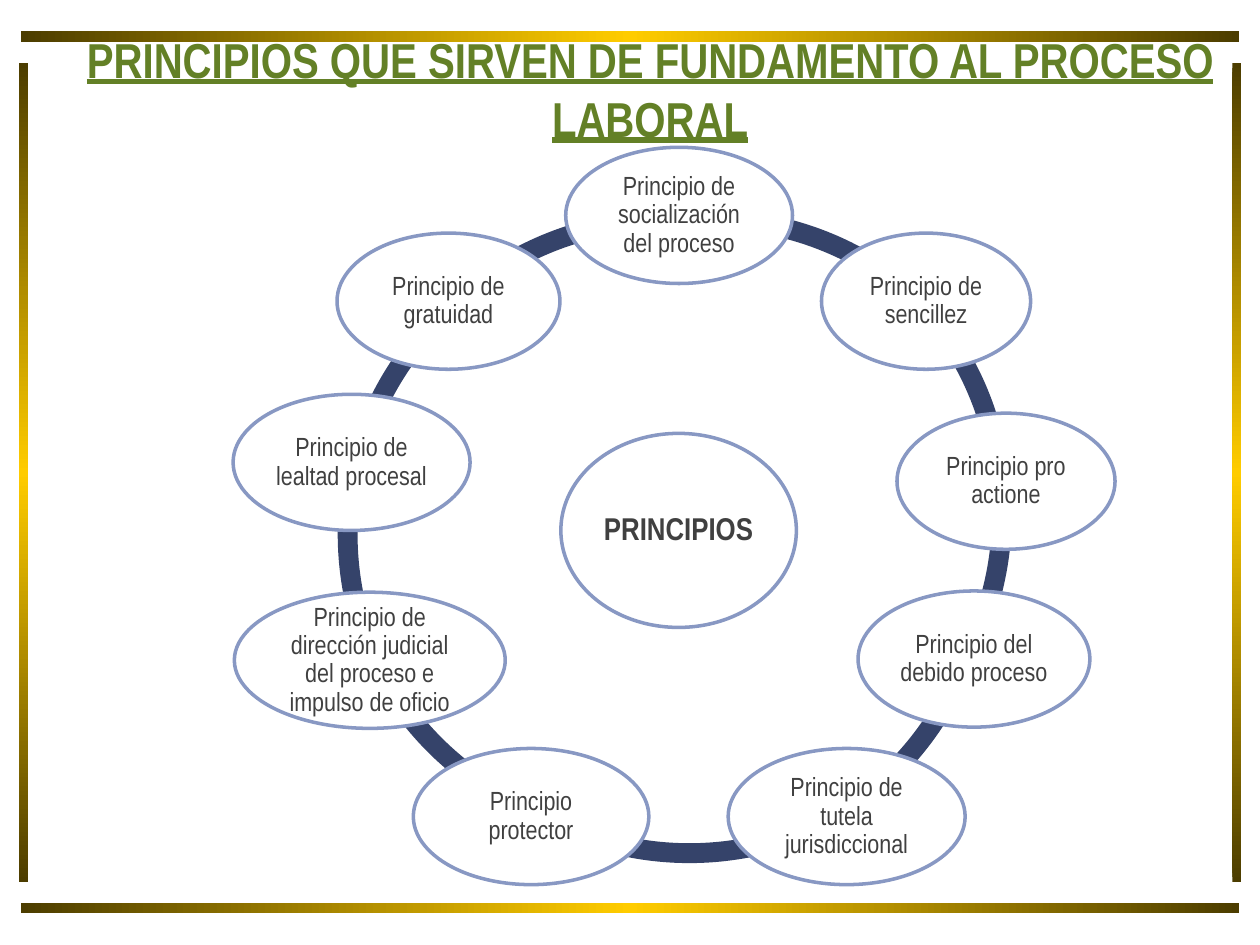
from copy import deepcopy

from pptx import Presentation
from pptx.dml.color import RGBColor
from pptx.enum.shapes import MSO_SHAPE
from pptx.enum.text import MSO_ANCHOR, PP_ALIGN
from pptx.oxml.ns import qn
from pptx.util import Pt

RECTANGLE = MSO_SHAPE.RECTANGLE
OVAL = MSO_SHAPE.OVAL
BLOCK_ARC = MSO_SHAPE.BLOCK_ARC
MIDDLE = MSO_ANCHOR.MIDDLE
CENTER = PP_ALIGN.CENTER

GOLD_STOPS = ((0, "4C3D00"), (0.5, "FFCC00"), (1, "4C3D00"))
BARS = (
    (12, 18, 696, 6, 0),
    (12, 516, 696, 6, 0),
    (10.8, 36, 5.2, 468, 90),
    (704.2, 36, 5.2, 468, 90),
)
ARC_SIZE = 365.8
ARC_THICKNESS = 0.031
ARCS = (
    (197.3, 120.2, 136.116, 163.512),
    (193, 124.6, 116.348, 137.21),
    (193, 122.4, 93.893, 116.043),
    (190.8, 117.4, 67.755, 92.784),
    (211, 127.4, 35.965, 72.035),
    (203, 131.8, 11.934, 34.256),
    (212.4, 110.9, 212.294, 16.295),
    (212.4, 109.4, 190.769, 212.588),
    (222.5, 119.5, 158.733, 188.062),
)
NODE_HEIGHT = 77.8
NODES = (
    (388.1, 123.1, 129.6, "Principio de socialización del proceso"),
    (529.2, 172.1, 119.5, "Principio de sencillez"),
    (574.9, 275, 124.6, "Principio pro actione"),
    (556.6, 376.6, 132.5, "Principio del debido proceso"),
    (483.8, 466.6, 135.4, "Principio de tutela jurisdiccional"),
    (303.5, 466.6, 134.6, "Principio protector"),
    (211.3, 377.3, 154.8,
     "Principio de dirección judicial del proceso e impulso de oficio"),
    (200.9, 264.2, 135.4, "Principio de lealtad procesal"),
    (256.3, 172.1, 127.4, "Principio de gratuidad"),
)


def color(value):
    return RGBColor.from_string(value)


def apply(target, values):
    for name, value in values.items():
        setattr(target, name, value)


class SlideBuilder:
    font_name = "Arial Narrow"
    title_color = "638026"
    text_color = "404040"
    arc_color = "35436A"
    outline_color = "8898C3"
    node_color = "FFFFFF"

    def __init__(self, slide):
        self.slide = slide

    def shape(self, kind, left, top, width, height):
        shape = self.slide.shapes.add_shape(
            kind, Pt(left), Pt(top), Pt(width), Pt(height))
        shape.shadow.inherit = False
        shape.line.fill.background()
        return shape

    def label(self, box, text, inset, font, hue, spacing):
        side, edge = inset
        frame = box.text_frame
        apply(frame, {
            "word_wrap": True, "vertical_anchor": MIDDLE,
            "margin_left": Pt(side), "margin_right": Pt(side),
            "margin_top": Pt(edge), "margin_bottom": Pt(edge),
        })
        para = frame.paragraphs[0]
        apply(para, {"alignment": CENTER, "line_spacing": spacing})
        span = para.add_run()
        span.text = text
        apply(span.font, {"name": self.font_name, **font})
        span.font.color.rgb = color(hue)

    def bar(self, left, top, width, height, angle):
        bar = self.shape(RECTANGLE, left, top, width, height)
        bar.fill.gradient()
        bar.fill.gradient_angle = angle
        stop_list = next(bar.element.spPr.iter(qn("a:gsLst")))
        stop_list.append(deepcopy(stop_list[-1]))
        for stop, (position, hue) in zip(bar.fill.gradient_stops, GOLD_STOPS):
            stop.position = position
            stop.color.rgb = color(hue)

    def title(self, text, left, top, width, height):
        box = self.slide.shapes.add_textbox(
            Pt(left), Pt(top), Pt(width), Pt(height))
        font = {"size": Pt(28), "bold": True, "underline": True}
        self.label(box, text, (7.2, 3.6), font, self.title_color, 1.0)

    def arc(self, left, top, start, end):
        arc = self.shape(BLOCK_ARC, left, top, ARC_SIZE, ARC_SIZE)
        for index, value in enumerate((start, end, ARC_THICKNESS)):
            arc.adjustments[index] = value
        arc.fill.solid()
        arc.fill.fore_color.rgb = color(self.arc_color)

    def node(self, center_x, center_y, width, text,
             height=NODE_HEIGHT, size=15, bold=False):
        node = self.shape(OVAL, center_x - width / 2, center_y - height / 2,
                          width, height)
        node.fill.solid()
        node.fill.fore_color.rgb = color(self.node_color)
        node.line.color.rgb = color(self.outline_color)
        node.line.width = Pt(2)
        font = {"size": Pt(size), "bold": bold}
        self.label(node, text, (1.4, 1.4), font, self.text_color, 0.9)


def main():
    deck = Presentation()
    apply(deck, {"slide_width": Pt(720), "slide_height": Pt(540)})
    page = SlideBuilder(deck.slides.add_slide(deck.slide_layouts[6]))
    for bar in BARS:
        page.bar(*bar)
    page.title("PRINCIPIOS QUE SIRVEN DE FUNDAMENTO AL PROCESO LABORAL",
               39.6, 22.3, 663.8, 56.2)
    for arc in ARCS:
        page.arc(*arc)
    page.node(387.8, 303.1, 134.6, "PRINCIPIOS",
              height=110.9, size=18, bold=True)
    for node in NODES:
        page.node(*node)
    deck.save("out.pptx")


if __name__ == "__main__":
    main()
